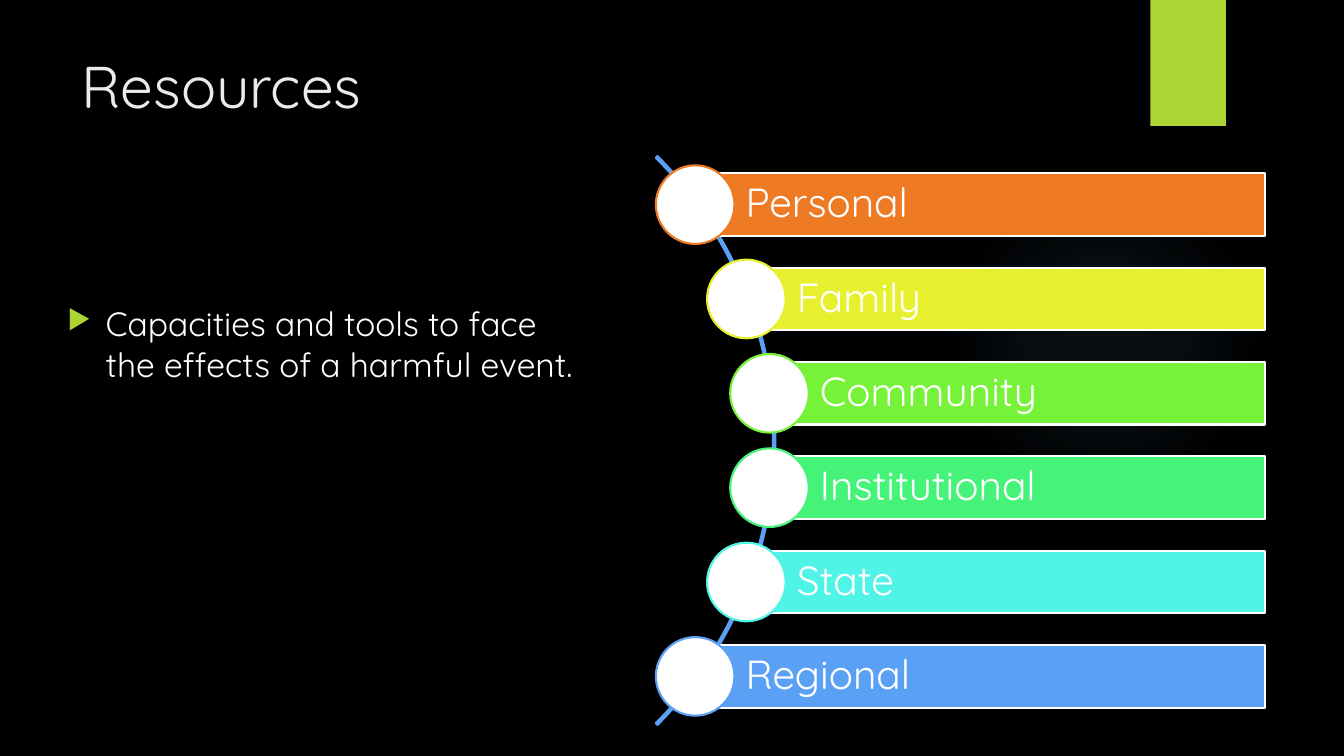
import math

from lxml import etree
from pptx import Presentation
from pptx.dml.color import RGBColor
from pptx.enum.shapes import MSO_SHAPE
from pptx.enum.text import MSO_ANCHOR, PP_ALIGN
from pptx.oxml import parse_xml
from pptx.oxml.ns import nsdecls, qn
from pptx.util import Inches, Pt

RECT, OVAL, ARC = MSO_SHAPE.RECTANGLE, MSO_SHAPE.OVAL, MSO_SHAPE.BLOCK_ARC
LEFT, TOP, MIDDLE = PP_ALIGN.LEFT, MSO_ANCHOR.TOP, MSO_ANCHOR.MIDDLE
TITLE_ONLY = 5
WHITE, LIME, BLUE = "FFFFFF", "ACD433", "5AA0F5"

LEVELS = [
    ("Personal", "EF7A24"),
    ("Family", "E7F02F"),
    ("Community", "76F239"),
    ("Institutional", "44F378"),
    ("State", "4FF4E7"),
    ("Regional", BLUE),
]


def color(hex_value):
    return RGBColor.from_string(hex_value)


class SlideBuilder:
    font = "Quicksand"

    def __init__(self, prs):
        self.slide = prs.slides.add_slide(prs.slide_layouts[TITLE_ONLY])
        fill = self.slide.background.fill
        fill.solid()
        fill.fore_color.rgb = color("000000")

    def shape(self, kind, left, top, width, height, fill=None, line=None):
        item = self.slide.shapes.add_shape(
            kind, Inches(left), Inches(top), Inches(width), Inches(height))
        item.shadow.inherit = False
        if fill:
            item.fill.solid()
            item.fill.fore_color.rgb = color(fill)
        else:
            item.fill.background()
        if line:
            item.line.color.rgb = color(line)
            item.line.width = Pt(1.5)
        else:
            item.line.fill.background()
        return item

    def set_text(self, item, text, size, text_color=WHITE, anchor=TOP):
        frame = item.text_frame
        frame.text = text
        frame.word_wrap = True
        frame.vertical_anchor = anchor
        paragraph = frame.paragraphs[0]
        paragraph.alignment = LEFT
        font = paragraph.runs[0].font
        font.name, font.size = self.font, Pt(size)
        font.color.rgb = color(text_color)
        return paragraph

    def title(self, text, left, top, width, height):
        item = self.slide.shapes.title
        item.left, item.top = Inches(left), Inches(top)
        item.width, item.height = Inches(width), Inches(height)
        self.set_text(item, text, 42, "EBEBEB")

    def bullet(self, text, left, top, width, height):
        item = self.slide.shapes.add_textbox(
            Inches(left), Inches(top), Inches(width), Inches(height))
        props = self.set_text(item, text, 24)._p.get_or_add_pPr()
        props.set("marL", str(Inches(0.38)))
        props.set("indent", str(-Inches(0.38)))
        tint = etree.SubElement(props, qn("a:buClr"))
        etree.SubElement(tint, qn("a:srgbClr")).set("val", LIME)
        etree.SubElement(props, qn("a:buSzPct")).set("val", "80000")
        etree.SubElement(props, qn("a:buChar")).set("char", "▶")

    def glow(self, left, top, size, hex_value, stops):
        item = self.shape(OVAL, left, top, size, size)
        stop_xml = "".join(
            f'<a:gs pos="{pos * 1000}"><a:srgbClr val="{hex_value}">'
            f'<a:alpha val="{alpha * 1000}"/></a:srgbClr></a:gs>'
            for pos, alpha in stops)
        gradient = parse_xml(
            f'<a:gradFill {nsdecls("a")}><a:gsLst>{stop_xml}</a:gsLst>'
            '<a:path path="circle"><a:fillToRect l="50000" t="50000" '
            'r="50000" b="50000"/></a:path></a:gradFill>')
        props = item._element.spPr
        props.replace(props.find(qn("a:noFill")), gradient)

    def arc(self, center_x, center_y, radius):
        item = self.shape(ARC, center_x - radius, center_y - radius,
                          2 * radius, 2 * radius, line=BLUE)
        # From 315 to 45 degrees, with almost no thickness
        for index, value in enumerate((189, 27, 0.003)):
            item.adjustments[index] = value

    def level(self, text, hex_value, center_x, center_y):
        right, height, dot = 12.55, 0.62, 0.78
        bar = self.shape(RECT, center_x, center_y - height / 2,
                         right - center_x, height, hex_value, WHITE)
        self.set_text(bar, text, 29, anchor=MIDDLE).line_spacing = 0.9
        frame = bar.text_frame
        frame.margin_left = Inches(0.5)
        frame.margin_top = frame.margin_right = frame.margin_bottom = Inches(0.08)
        self.shape(OVAL, center_x - dot / 2, center_y - dot / 2,
                   dot, dot, WHITE, hex_value)


def main():
    prs = Presentation()
    prs.slide_width, prs.slide_height = Inches(13.33), Inches(7.5)
    page = SlideBuilder(prs)

    # Backdrop
    page.glow(9.41, 1.83, 3.08, "7AC4F0", [(0, 7), (36, 6), (69, 0)])
    page.shape(RECT, 11.41, 0, 0.75, 1.25, LIME)

    # Title and definition
    page.title("Resources", 0.71, 0.44, 10.29, 1.53)
    page.bullet("Capacities and tools to face the effects of a harmful event.",
                0.57, 2.96, 5.28, 2.11)

    # Levels of resources, with their dots along the arc
    arc_x, arc_y, dot_radius, bar_top, bar_bottom = 3.7, 4.37, 3.96, 2.03, 6.71
    pitch = (bar_bottom - bar_top) / (len(LEVELS) - 1)
    page.arc(arc_x, arc_y, 3.99)
    for index, (name, hex_value) in enumerate(LEVELS):
        center_y = bar_top + index * pitch
        reach = math.sqrt(dot_radius ** 2 - (center_y - arc_y) ** 2)
        page.level(name, hex_value, arc_x + reach, center_y)

    prs.save("out.pptx")


if __name__ == "__main__":
    main()
